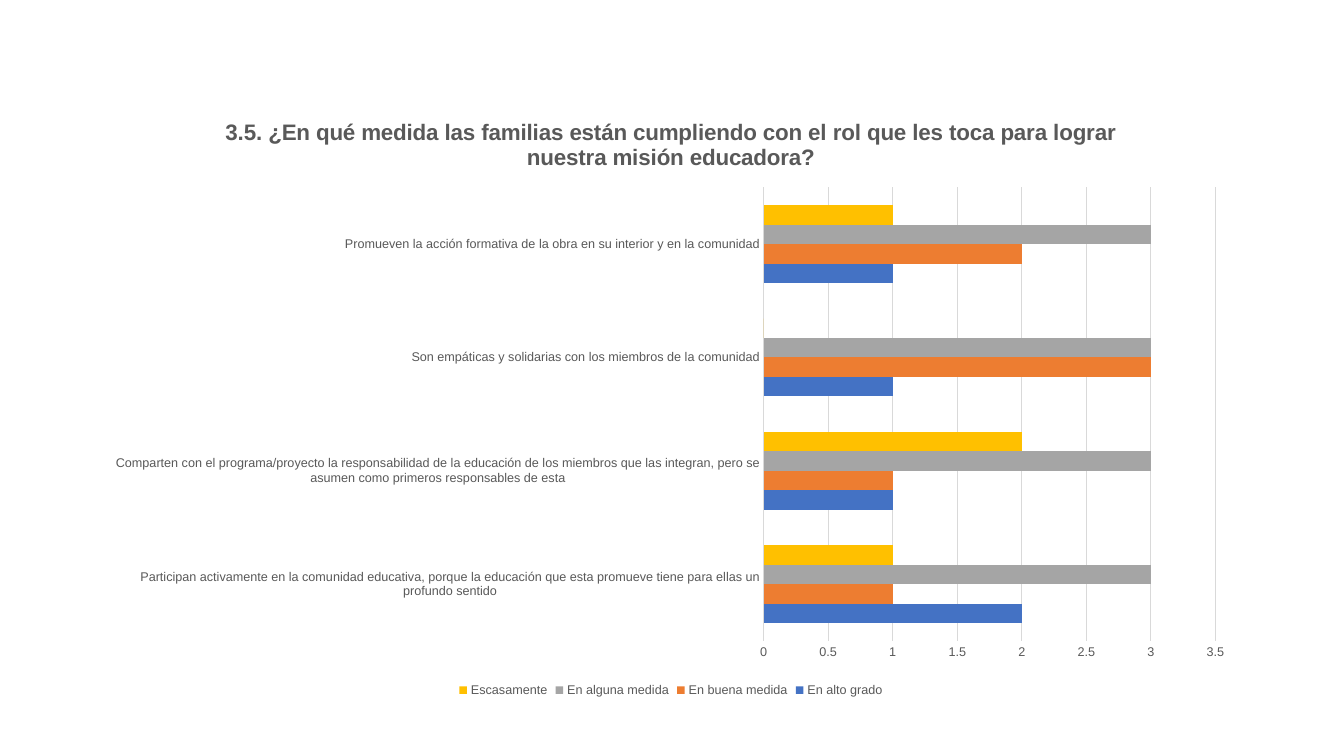
from lxml import etree
from pptx import Presentation
from pptx.chart.data import CategoryChartData
from pptx.dml.color import RGBColor
from pptx.enum.chart import XL_CHART_TYPE, XL_LEGEND_POSITION, XL_TICK_MARK
from pptx.oxml.ns import qn
from pptx.util import Inches, Pt

TEXT = RGBColor(0x59, 0x59, 0x59)
GRID = RGBColor(0xD9, 0xD9, 0xD9)
BLUE = RGBColor(0x44, 0x72, 0xC4)
ORANGE = RGBColor(0xED, 0x7D, 0x31)
GRAY = RGBColor(0xA5, 0xA5, 0xA5)
YELLOW = RGBColor(0xFF, 0xC0, 0x00)

TITLE = ("3.5. ¿En qué medida las familias están cumpliendo con el rol "
         "que les toca para lograr nuestra misión educadora?")
CATEGORIES = [
    "Participan activamente en la comunidad educativa, porque la educación "
    "que esta promueve tiene para ellas un profundo sentido",
    "Comparten con el programa/proyecto la responsabilidad de la educación de los "
    "miembros que las integran, pero se asumen como primeros responsables de esta",
    "Son empáticas y solidarias con los miembros de la comunidad",
    "Promueven la acción formativa de la obra en su interior y en la comunidad",
]
SERIES = [
    ("En alto grado", (2, 1, 1, 1), BLUE),
    ("En buena medida", (1, 1, 3, 2), ORANGE),
    ("En alguna medida", (3, 3, 3, 3), GRAY),
    ("Escasamente", (1, 2, 0, 1), YELLOW),
]
PLOT_LAYOUT = {
    "layoutTarget": "inner", "xMode": "edge", "yMode": "edge",
    "x": 0.58, "y": 0.15, "w": 0.39, "h": 0.75,
}


def format_font(font, size, bold=False):
    values = {"name": "Arial", "size": Pt(size), "bold": bold}
    for name, value in values.items():
        setattr(font, name, value)
    font.color.rgb = TEXT


def format_line(line):
    line.color.rgb = GRID
    line.width = Pt(0.75)


def format_axes(chart):
    for axis in (chart.category_axis, chart.value_axis):
        values = {"major_tick_mark": XL_TICK_MARK.NONE,
                  "minor_tick_mark": XL_TICK_MARK.NONE}
        for name, value in values.items():
            setattr(axis, name, value)
        format_font(axis.tick_labels.font, 9)
    format_line(chart.category_axis.format.line)
    axis = chart.value_axis
    axis.format.line.fill.background()
    for name, value in {"minimum_scale": 0, "maximum_scale": 3.5,
                        "major_unit": 0.5, "has_major_gridlines": True}.items():
        setattr(axis, name, value)
    format_line(axis.major_gridlines.format.line)


def place_plot(chart):
    area = chart.plots[0]._element.getparent()
    layout = area.find(qn("c:layout"))
    if layout is None:
        layout = etree.Element(qn("c:layout"))
        area.insert(0, layout)
    manual = etree.SubElement(layout, qn("c:manualLayout"))
    for name, value in PLOT_LAYOUT.items():
        etree.SubElement(manual, qn(f"c:{name}")).set("val", str(value))


def add_survey_chart(s, left, top, width, height):
    data = CategoryChartData(number_format="General")
    data.categories = CATEGORIES
    for name, values, _ in SERIES:
        data.add_series(name, values)
    chart = s.shapes.add_chart(XL_CHART_TYPE.BAR_CLUSTERED, left, top,
                               width, height, data).chart
    format_font(chart.font, 10)
    chart.has_title = True
    p = chart.chart_title.text_frame.paragraphs[0]
    r = p.add_run()
    r.text = TITLE
    format_font(r.font, 16, True)
    chart.chart_title.include_in_layout = False

    plot = chart.plots[0]
    for name, value in {"gap_width": 182, "vary_by_categories": False}.items():
        setattr(plot, name, value)
    for series, (_, _, color) in zip(plot.series, SERIES):
        series.format.fill.solid()
        series.format.fill.fore_color.rgb = color
    format_axes(chart)
    place_plot(chart)

    chart.has_legend = True
    chart.legend.position = XL_LEGEND_POSITION.BOTTOM
    chart.legend.include_in_layout = False
    format_font(chart.legend.font, 9)


def main():
    prs = Presentation()
    prs.slide_width = Inches(13.33)
    prs.slide_height = Inches(7.5)
    s = prs.slides.add_slide(prs.slide_layouts[6])
    add_survey_chart(s, Inches(0.91), Inches(0.96), Inches(11.49), Inches(6))
    prs.save("out.pptx")


if __name__ == "__main__":
    main()
